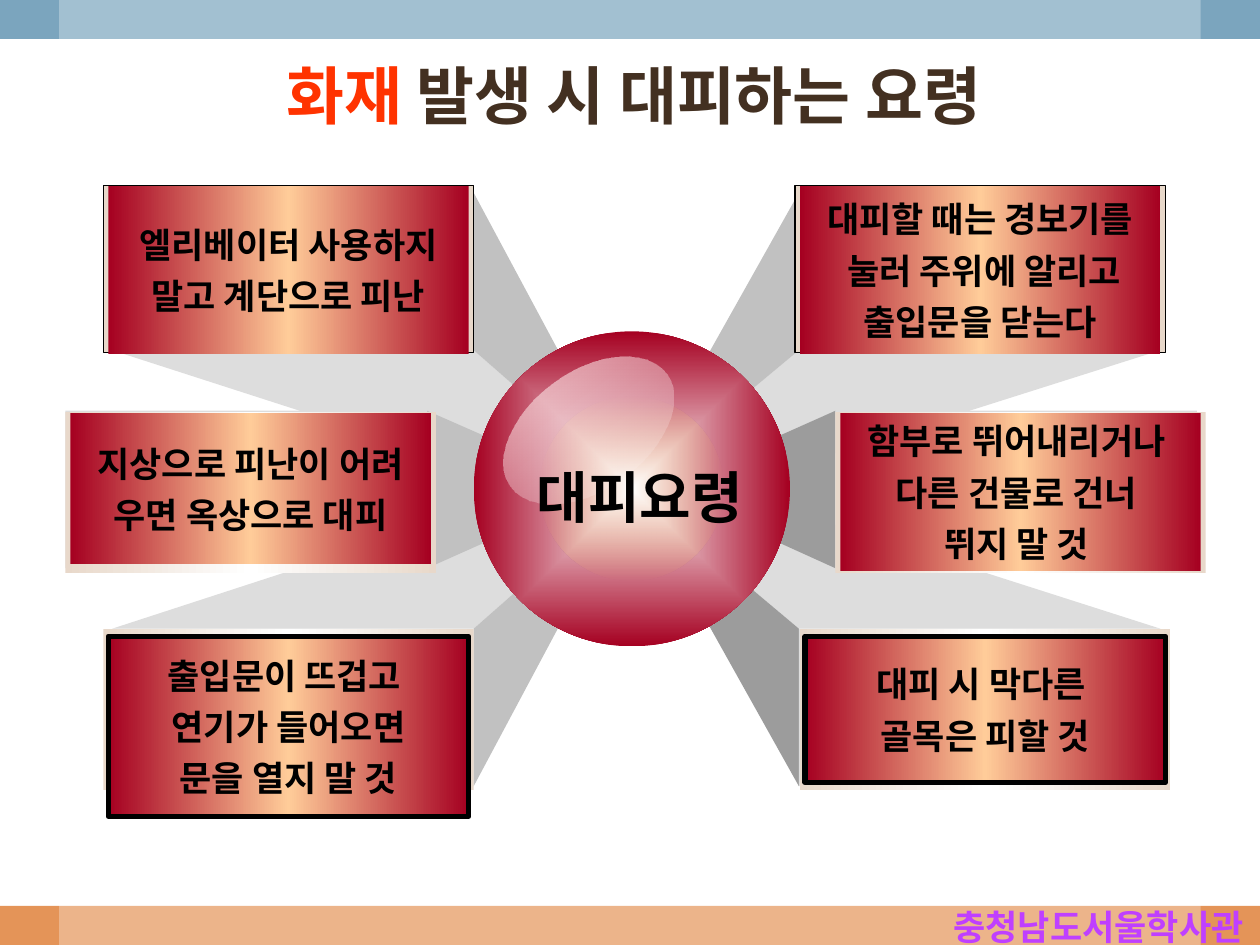
from collections import namedtuple

from lxml import etree
from pptx import Presentation
from pptx.dml.color import RGBColor
from pptx.enum.shapes import MSO_SHAPE as Shape
from pptx.enum.text import MSO_ANCHOR as Anchor, PP_ALIGN as Align
from pptx.oxml.ns import nsdecls
from pptx.util import Inches, Pt

FONT = "Noto Sans CJK KR"
BLACK = RGBColor(0x00, 0x00, 0x00)
WHITE = RGBColor(0xFF, 0xFF, 0xFF)
BLUE = RGBColor(0x7B, 0xA5, 0xBE)
ORANGE = RGBColor(0xE4, 0x94, 0x58)
LIGHT = RGBColor(0xDD, 0xDD, 0xDD)
MEDIUM = RGBColor(0xC1, 0xC1, 0xC1)
DARK = RGBColor(0x9C, 0x9C, 0x9C)
CREAM = RGBColor(0xE8, 0xD8, 0xCA)
CRIMSON = RGBColor(0xA5, 0x00, 0x21)
PEACH = RGBColor(0xFF, 0xCC, 0x99)
PINK = RGBColor(0xFF, 0xE1, 0xE1)
RED = RGBColor(0xFF, 0x33, 0x00)
BROWN = RGBColor(0x43, 0x30, 0x21)
VIOLET = RGBColor(0xBF, 0x3F, 0xFF)

CARD_W, CARD_H = 2.87, 1.25
MID_X, MID_Y = 5.02, 3.88
LINEAR = '<a:lin ang="{}" scaled="0"/>'
RADIAL = ('<a:path path="shape"><a:fillToRect l="50000" t="50000" '
          'r="50000" b="50000"/></a:path>')

Row = namedtuple("Row", "y plate_dy plate_h panel_dy plate_line panel_line")
TOP = Row(1.53, -0.06, 1.33, -0.05, 0.75, 0)
MIDDLE = Row(3.26, 0.01, 1.28, 0.02, 0, 0)
BOTTOM = Row(4.99, 0, 1.28, 0.06, 0, 3)

# row, left, plate offset, panel height, shade of the inner side, text
CARDS = [
    (BOTTOM, 0.89, -0.07, 1.43, MEDIUM,
     ["출입문이 뜨겁고 ", "연기가 들어오면", "문을 열지 말 것"]),
    (BOTTOM, 6.34, 0.01, 1.16, DARK, ["대피 시 막다른 ", "골목은 피할 것"]),
    (TOP, 0.89, -0.07, 1.33, MEDIUM,
     ["엘리베이터 사용하지", "말고 계단으로 피난"]),
    (MIDDLE, 0.52, 0, 1.2, MEDIUM,
     ["지상으로 피난이 어려", "우면 옥상으로 대피"]),
    (TOP, 6.34, -0.03, 1.33, MEDIUM,
     ["대피할 때는 경보기를", " 눌러 주위에 알리고", "출입문을 닫는다"]),
    (MIDDLE, 6.63, 0, 1.25, DARK,
     ["함부로 뛰어내리거나 ", "다른 건물로 건너 ", "뛰지 말 것 "]),
]


def set_gradient(sp, stops, direction):
    """Fill with stops of (position %, colour, opacity %)."""
    gs = "".join(
        f'<a:gs pos="{pos * 1000}"><a:srgbClr val="{color}">'
        f'<a:alpha val="{alpha * 1000}"/></a:srgbClr></a:gs>'
        for pos, color, alpha in stops)
    grad = etree.fromstring(f'<a:gradFill {nsdecls("a")} rotWithShape="1">'
                            f'<a:gsLst>{gs}</a:gsLst>{direction}</a:gradFill>')
    sp.fill.background()
    pr = sp._element.spPr
    pr.replace(pr.find("{*}noFill"), grad)


def set_band(sp, edge, middle):
    stops = [(0, edge, 100), (50, middle, 100), (100, edge, 100)]
    set_gradient(sp, stops, LINEAR.format(0))


def add_plain(shapes, kind, box, fill=None, line=0):
    sp = shapes.add_shape(kind, *map(Inches, box))
    sp.shadow.inherit = False
    if fill is not None:
        sp.fill.solid()
        sp.fill.fore_color.rgb = fill
    if line:
        sp.line.color.rgb = BLACK
        sp.line.width = Pt(line)
    else:
        sp.line.fill.background()
    return sp


def write(tf, paragraphs, size, align=Align.CENTER):
    """Write paragraphs, each a list of (text, colour) runs."""
    for i, runs in enumerate(paragraphs):
        p = tf.add_paragraph() if i else tf.paragraphs[0]
        p.alignment = align
        p.space_before = Pt(5.3 if i else 0)
        for text, color in runs:
            r = p.add_run()
            r.text = text
            for name, value in dict(name=FONT, size=Pt(size), bold=True).items():
                setattr(r.font, name, value)
            r.font.color.rgb = color
            fonts = r._r.get_or_add_rPr()
            ea = etree.SubElement(fonts, fonts.find("{*}latin").tag[:-5] + "ea")
            ea.set("typeface", FONT)


def add_text(s, box, runs, size, align=Align.CENTER, anchor=Anchor.TOP):
    tf = s.shapes.add_textbox(*map(Inches, box)).text_frame
    tf.word_wrap = True
    tf.vertical_anchor = anchor
    write(tf, [runs], size, align)


def add_face(s, points, fill):
    first, *rest = [(Inches(x), Inches(y)) for x, y in points]
    fb = s.shapes.build_freeform(*first, scale=1.0)
    fb.add_line_segments(rest, close=True)
    sp = fb.convert_to_shape()
    sp.shadow.inherit = False
    sp.fill.solid()
    sp.fill.fore_color.rgb = fill
    sp.line.fill.background()


def add_depth(s, row, x, shade):
    """Draw the faces that run from a card back to the centre."""
    side = 1 if x < MID_X else -1
    inner, outer = (x + CARD_W, x)[::side]
    top, bottom = row.y, row.y + CARD_H
    apex = (MID_X - 0.22 * side if row is MIDDLE else MID_X, MID_Y)
    if row is not MIDDLE:
        edge = bottom if row is TOP else top
        far = (MID_X - 0.72 * side, MID_Y)
        add_face(s, [(outer, edge), (inner, edge), apex, far], LIGHT)
    add_face(s, [(inner, top), (inner, bottom), apex], shade)


def add_card(s, row, x, plate_dx, panel_h, shade, lines):
    add_depth(s, row, x, shade)
    add_plain(s.shapes, Shape.RECTANGLE, (x, row.y, CARD_W, CARD_H), LIGHT)
    left = x + plate_dx
    plate = add_plain(s.shapes, Shape.RECTANGLE,
                      (left, row.y + row.plate_dy, 2.94, row.plate_h),
                      line=row.plate_line)
    set_band(plate, CREAM, WHITE)
    panel = add_plain(s.shapes, Shape.RECTANGLE,
                      (left + 0.04, row.y + row.panel_dy, 2.86, panel_h),
                      line=row.panel_line)
    set_band(panel, CRIMSON, PEACH)
    tf = panel.text_frame
    tf.word_wrap = False
    tf.vertical_anchor = Anchor.MIDDLE
    write(tf, [[(line, BLACK)] for line in lines], 20)


def add_ball(s, x, y):
    shapes = s.shapes.add_group_shape().shapes
    ball = add_plain(shapes, Shape.OVAL, (x, y, 2.51, 2.5))
    set_gradient(ball, [(0, WHITE, 100), (100, CRIMSON, 100)], RADIAL)
    glow = add_plain(shapes, Shape.OVAL, (x + 0.52, y + 0.52, 1.46, 1.46))
    set_gradient(glow, [(0, WHITE, 100), (100, ORANGE, 0)], RADIAL)
    shine = add_plain(shapes, Shape.OVAL, (x + 0.15, y + 0.32, 1.52, 0.93))
    set_gradient(shine, [(0, PINK, 76), (100, WHITE, 0)], LINEAR.format(5400000))
    shine.rotation = 324.2
    add_text(s, (x + 0.19, y + 0.99, 2.26, 0.64), [("대피요령", BLACK)], 32)


def add_frame(s):
    add_plain(s.shapes, Shape.RECTANGLE, (0, 7.19, 10, 0.31), ORANGE)
    add_plain(s.shapes, Shape.RECTANGLE, (0, 0, 10, 0.31), BLUE)
    veil = add_plain(s.shapes, Shape.RECTANGLE, (0.47, 0, 9.06, 7.5), WHITE)
    color = veil._element.spPr.find("{*}solidFill")[0]
    etree.SubElement(color, color.tag.replace("srgbClr", "alpha")).set("val", "30000")


def main():
    prs = Presentation()
    prs.slide_width, prs.slide_height = Inches(10), Inches(7.5)
    s = prs.slides.add_slide(prs.slide_layouts[6])
    add_frame(s)
    for card in CARDS:
        add_card(s, *card)
    add_ball(s, 3.76, 2.63)
    add_text(s, (1.56, 0.39, 6.94, 0.71),
             [("화재 ", RED), ("발생 시 대피하는 요령", BROWN)], 36,
             anchor=Anchor.MIDDLE)
    add_text(s, (6.5, 7.14, 3.47, 0.44), [("충청남도서울학사관", VIOLET)], 20,
             align=Align.RIGHT)
    prs.save("out.pptx")


if __name__ == "__main__":
    main()
